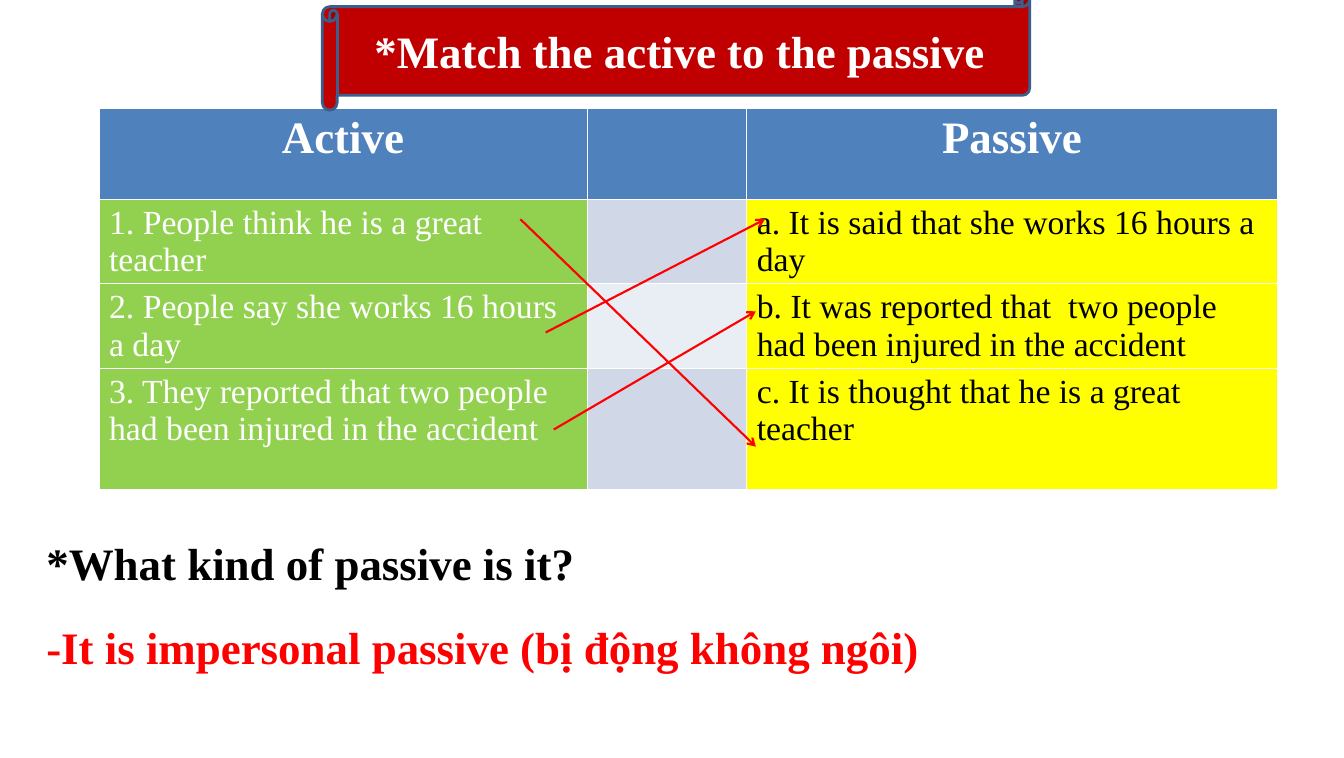
import dataclasses

import pptx
import pptx.dml.color
import pptx.enum.shapes
import pptx.enum.text
import pptx.oxml.ns
import pptx.slide
import pptx.text.text
import pptx.util
from lxml import etree

Inches = pptx.util.Inches
RGBColor = pptx.dml.color.RGBColor
Align = pptx.enum.text.PP_ALIGN

WHITE = RGBColor(0xFF, 0xFF, 0xFF)
BLACK = RGBColor(0x00, 0x00, 0x00)
RED = RGBColor(0xFF, 0x00, 0x00)
DARK_RED = RGBColor(0xC0, 0x00, 0x00)
SCROLL_EDGE = RGBColor(0x3A, 0x5F, 0x8C)
HEADER_BLUE = RGBColor(0x4F, 0x81, 0xBD)
GREEN = RGBColor(0x92, 0xD0, 0x50)
YELLOW = RGBColor(0xFF, 0xFF, 0x00)
BAND_DARK = RGBColor(0xD0, 0xD8, 0xE8)
BAND_LIGHT = RGBColor(0xE9, 0xED, 0xF4)

FONT = "Times New Roman"
COLUMN_WIDTHS = (4.83, 1.58, 5.25)


@dataclasses.dataclass(frozen=True)
class Row:
    active: str
    passive: str
    height: float
    fills: tuple[RGBColor, RGBColor, RGBColor]
    passive_color: RGBColor = BLACK
    size: int = 24
    bold: bool = False
    align: Align = Align.LEFT


@dataclasses.dataclass(frozen=True)
class Match:
    start: tuple[float, float]
    end: tuple[float, float]


@dataclasses.dataclass(frozen=True)
class Line:
    text: str
    top: float
    width: float
    color: RGBColor


ROWS = (
    Row("Active", "Passive", 0.9, (HEADER_BLUE,) * 3, WHITE, 32, True, Align.CENTER),
    Row("1. People think he is a great teacher",
        "a. It is said that she works 16 hours a day",
        0.83, (GREEN, BAND_DARK, YELLOW)),
    Row("2. People say she works 16 hours a day",
        "b. It was reported that  two people had been injured in the accident",
        0.84, (GREEN, BAND_LIGHT, YELLOW)),
    Row("3. They reported that two people had been injured in the accident",
        "c. It is thought that he is a great teacher",
        1.2, (GREEN, BAND_DARK, YELLOW)),
)

MATCHES = (
    Match((5.15, 2.17), (7.48, 4.42)),
    Match((5.4, 3.29), (7.57, 2.17)),
    Match((5.48, 4.25), (7.48, 3.08)),
)

LINES = (
    Line("*What kind of passive is it?", 5.25, 6.32, BLACK),
    Line("-It is impersonal passive (bị động không ngôi)", 6.08, 9.04, RED),
)


def write(frame: pptx.text.text.TextFrame, text: str, color: RGBColor,
          size: int = 32, bold: bool = True, align: Align = Align.LEFT) -> None:
    frame.text = text
    paragraph = frame.paragraphs[0]
    paragraph.alignment = align
    for run in paragraph.runs:
        run.font.name = FONT
        run.font.size = pptx.util.Pt(size)
        run.font.bold = bold
        run.font.color.rgb = color


def add_match_table(slide: pptx.slide.Slide) -> None:
    height = sum(row.height for row in ROWS)
    table = slide.shapes.add_table(
        len(ROWS), len(COLUMN_WIDTHS), Inches(0.98), Inches(1.07),
        Inches(sum(COLUMN_WIDTHS)), Inches(height)).table
    for column, width in zip(table.columns, COLUMN_WIDTHS):
        column.width = Inches(width)
    for table_row, row in zip(table.rows, ROWS):
        table_row.height = Inches(row.height)
        for cell, fill in zip(table_row.cells, row.fills):
            cell.fill.solid()
            cell.fill.fore_color.rgb = fill
        active, _, passive = table_row.cells
        write(active.text_frame, row.active, WHITE, row.size, row.bold, row.align)
        write(passive.text_frame, row.passive, row.passive_color,
              row.size, row.bold, row.align)


def add_match_arrow(slide: pptx.slide.Slide, match: Match) -> None:
    connector = slide.shapes.add_connector(
        pptx.enum.shapes.MSO_CONNECTOR.STRAIGHT,
        *(Inches(value) for value in match.start + match.end))
    connector.line.color.rgb = RED
    connector.line.width = pptx.util.Pt(1.5)
    properties = connector._element.spPr
    outline = properties.find(pptx.oxml.ns.qn("a:ln"))
    etree.SubElement(outline, pptx.oxml.ns.qn("a:tailEnd"), type="arrow")
    etree.SubElement(properties, pptx.oxml.ns.qn("a:effectLst"))


def add_line(slide: pptx.slide.Slide, line: Line) -> None:
    box = slide.shapes.add_textbox(
        Inches(0.36), Inches(line.top), Inches(line.width), Inches(0.64))
    box.text_frame.word_wrap = True
    box.text_frame.auto_size = pptx.enum.text.MSO_AUTO_SIZE.SHAPE_TO_FIT_TEXT
    write(box.text_frame, line.text, line.color)


def add_title_scroll(slide: pptx.slide.Slide) -> None:
    scroll = slide.shapes.add_shape(
        pptx.enum.shapes.MSO_SHAPE.HORIZONTAL_SCROLL,
        Inches(3.19), Inches(-0.08), Inches(7), Inches(1.17))
    scroll.shadow.inherit = False
    scroll.fill.solid()
    scroll.fill.fore_color.rgb = DARK_RED
    scroll.line.color.rgb = SCROLL_EDGE
    scroll.line.width = pptx.util.Pt(2)
    scroll.text_frame.word_wrap = True
    scroll.text_frame.vertical_anchor = pptx.enum.text.MSO_ANCHOR.MIDDLE
    write(scroll.text_frame, "*Match the active to the passive", WHITE,
          align=Align.CENTER)


def main() -> None:
    presentation = pptx.Presentation()
    presentation.slide_width = Inches(13.3)
    presentation.slide_height = Inches(7.5)
    slide = presentation.slides.add_slide(presentation.slide_layouts[6])
    add_match_table(slide)
    for match in MATCHES:
        add_match_arrow(slide, match)
    for line in LINES:
        add_line(slide, line)
    add_title_scroll(slide)
    presentation.save("out.pptx")


if __name__ == "__main__":
    main()
